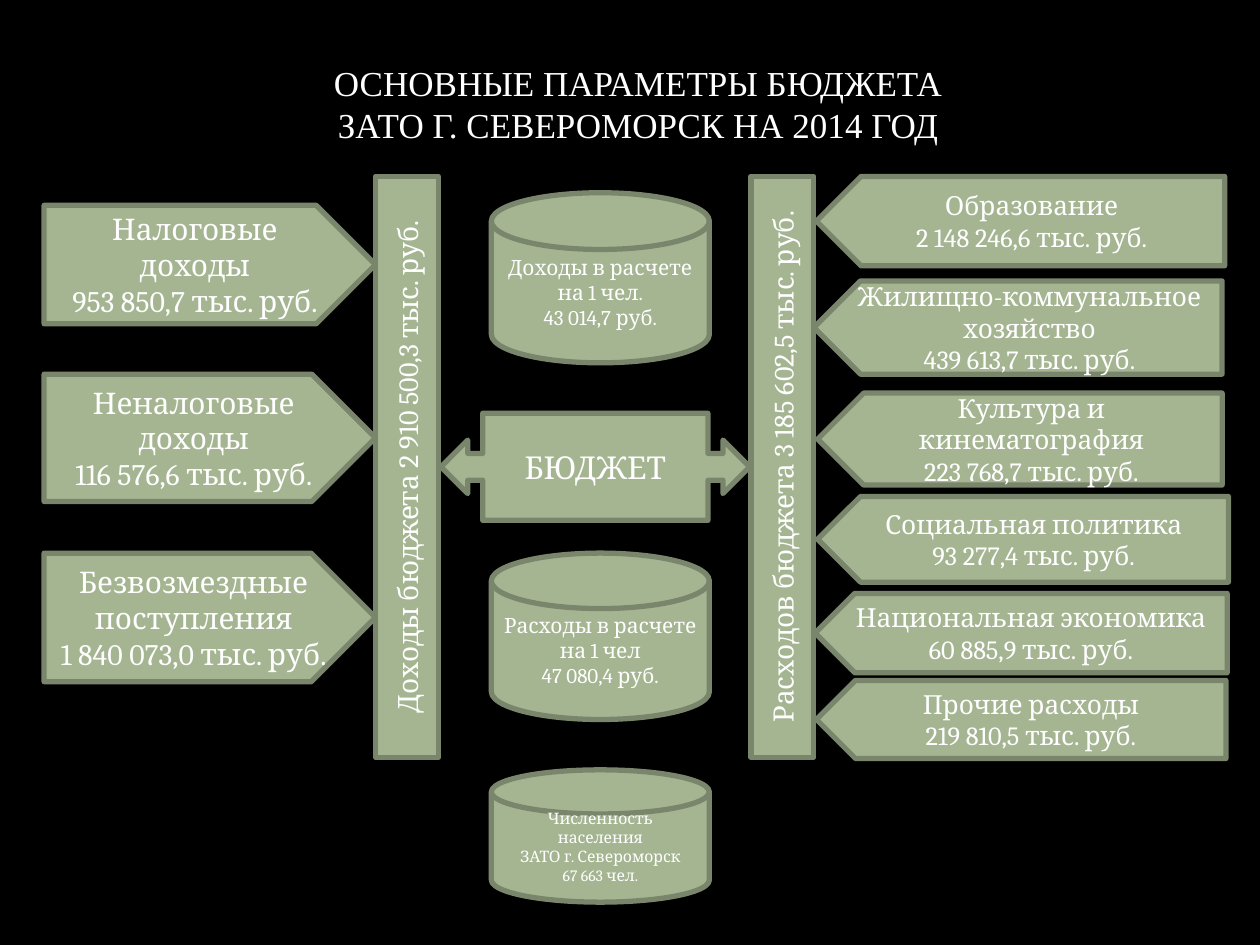
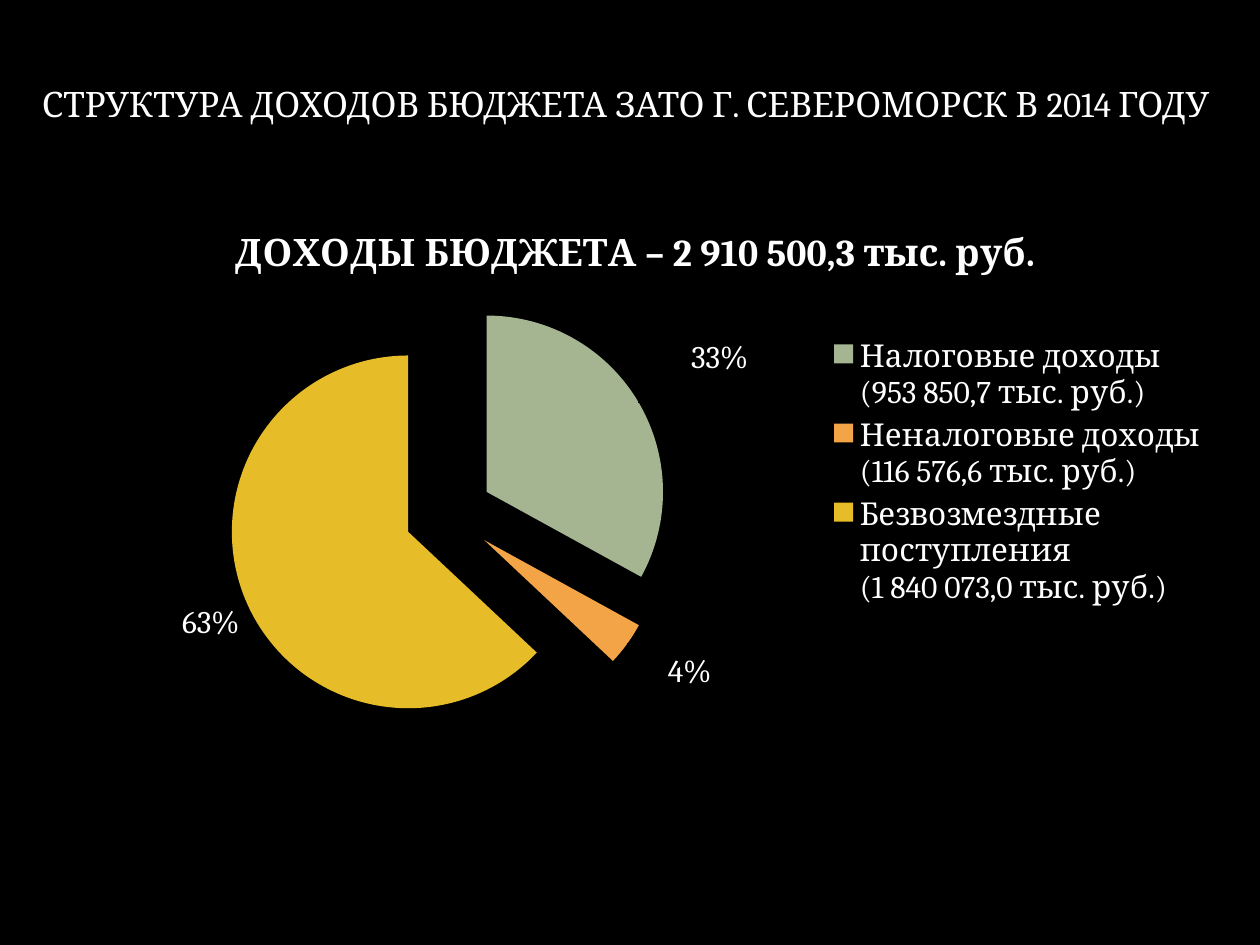
from dataclasses import dataclass

from lxml import etree
from pptx import Presentation
from pptx.chart.data import CategoryChartData
from pptx.dml.color import RGBColor
from pptx.enum.chart import XL_CHART_TYPE, XL_LEGEND_POSITION
from pptx.enum.shapes import MSO_SHAPE
from pptx.enum.text import MSO_ANCHOR, PP_ALIGN
from pptx.oxml.ns import qn
from pptx.util import Inches, Pt

PENTAGON = MSO_SHAPE.PENTAGON
CYLINDER = MSO_SHAPE.FLOWCHART_MAGNETIC_DISK
BAR = MSO_SHAPE.RECTANGLE
CALLOUT = MSO_SHAPE.LEFT_RIGHT_ARROW_CALLOUT
PIE = XL_CHART_TYPE.PIE
LEGEND_RIGHT = XL_LEGEND_POSITION.RIGHT
MIDDLE = MSO_ANCHOR.MIDDLE
CENTER = PP_ALIGN.CENTER

BLACK, WHITE = "000000", "FFFFFF"
GREEN, ORANGE, YELLOW = "A5B592", "F3A447", "E7BC29"
OUTLINE = "7A866C"
SERIF, TITLE_SERIF = "Cambria", "Times New Roman"
TITLE_ONLY = 5


@dataclass
class Block:
    """A filled diagram block with its text and box in inches."""
    kind: int
    text: str
    left: float
    top: float
    width: float
    height: float
    size: float
    flipped: bool = False
    vertical: bool = False
    adjustments: tuple = ()


@dataclass
class Slice:
    """A pie slice with its colour and label offset."""
    name: str
    percent: int
    color: str
    label_offset: tuple


def income(text: str, top: float, height: float) -> Block:
    """Describe an income arrow that points right."""
    return Block(PENTAGON, text, 0.35, top, 2.63, height, 17)


def expense(text: str, left: float, top: float, width: float, height: float) -> Block:
    """Describe an expense arrow that points left."""
    return Block(PENTAGON, text, left, top, width, height, 15, flipped=True)


def cylinder(text: str, top: float, height: float, size: float) -> Block:
    """Describe a cylinder in the middle column."""
    return Block(CYLINDER, text, 3.9, top, 1.73, height, size)


def total_bar(text: str, left: float) -> Block:
    """Describe a tall bar with a budget total."""
    return Block(BAR, text, left, 1.4, 0.5, 4.61, 16, vertical=True)


BLOCKS = [
    income("Налоговые доходы\n953 850,7 тыс. руб.", 1.63, 0.94),
    income("Неналоговые доходы\n116 576,6 тыс. руб.", 2.97, 1.01),
    income("Безвозмездные поступления\n1 840 073,0 тыс. руб.", 4.39, 1.02),
    cylinder("Доходы в расчете\nна 1 чел.\n43 014,7 руб.", 1.53, 1.35, 12),
    cylinder("Расходы в расчете на 1 чел\n47 080,4 руб.", 4.39, 1.32, 12),
    cylinder("Численность населения\nЗАТО г. Североморск\n67 663 чел.", 6.11, 1.05, 9),
    total_bar("Доходы бюджета 2 910 500,3 тыс. руб.", 2.98),
    total_bar("Расходов бюджета 3 185 602,5 тыс. руб.", 5.96),
    expense("Образование\n2 148 246,6 тыс. руб.", 6.48, 1.4, 3.24, 0.71),
    expense("Жилищно-коммунальное хозяйство\n439 613,7 тыс. руб.", 6.46, 2.23, 3.24, 0.74),
    expense("Культура и кинематография\n223 768,7 тыс. руб.", 6.49, 3.12, 3.21, 0.73),
    expense("Социальная политика\n93 277,4 тыс. руб.", 6.49, 3.94, 3.26, 0.68),
    expense("Национальная экономика\n60 885,9 тыс. руб.", 6.47, 4.71, 3.27, 0.63),
    expense("Прочие расходы\n219 810,5 тыс. руб.", 6.48, 5.4, 3.25, 0.62),
    Block(CALLOUT, "БЮДЖЕТ", 3.5, 3.28, 2.45, 0.85, 18, adjustments=(0.25, 0.25, 0.25, 0.73)),
]

SLICES = [
    Slice("Налоговые доходы\n(953 850,7 тыс. руб.)", 33, GREEN, (0.04, -0.04)),
    Slice("Неналоговые доходы\n(116 576,6 тыс. руб.)", 4, ORANGE, (0.03, 0.01)),
    Slice("Безвозмездные\nпоступления\n(1 840 073,0 тыс. руб.)", 63, YELLOW, (0, 0)),
]


def rgb(color: str) -> RGBColor:
    """Turn a hex string into a colour."""
    return RGBColor.from_string(color)


def set_font(font, size: float, name: str = SERIF, bold: bool = False) -> None:
    """Apply the shared white font style."""
    values = {"size": Pt(size), "name": name, "bold": bold}
    for attribute, value in values.items():
        setattr(font, attribute, value)
    font.color.rgb = rgb(WHITE)


def write_text(shape, text: str, size: float, name: str = SERIF) -> None:
    """Write centred paragraphs into a shape."""
    frame = shape.text_frame
    frame.text = text
    frame.word_wrap = True
    frame.vertical_anchor = MIDDLE
    for paragraph in frame.paragraphs:
        paragraph.alignment = CENTER
        for run in paragraph.runs:
            set_font(run.font, size, name)


def add_titled_slide(presentation, text: str, box: tuple, font_name: str):
    """Add a slide and place its title."""
    slide = presentation.slides.add_slide(presentation.slide_layouts[TITLE_ONLY])
    title = slide.shapes.title
    for attribute, value in zip(("left", "top", "width", "height"), box):
        setattr(title, attribute, Inches(value))
    write_text(title, text, 20, font_name)
    return slide


def add_block(slide, block: Block) -> None:
    """Draw one diagram block."""
    box = map(Inches, (block.left, block.top, block.width, block.height))
    shape = slide.shapes.add_shape(block.kind, *box)
    shape.shadow.inherit = False
    shape.fill.solid()
    shape.fill.fore_color.rgb = rgb(GREEN)
    shape.line.color.rgb = rgb(OUTLINE)
    shape.line.width = Pt(3)
    for index, value in enumerate(block.adjustments):
        shape.adjustments[index] = value
    write_text(shape, block.text, block.size)
    if block.flipped:
        shape._element.spPr.find(qn("a:xfrm")).set("flipH", "1")
    if block.vertical:
        shape._element.txBody.find(qn("a:bodyPr")).set("vert", "vert270")


def set_layout(element, position: int, edge: bool = True, **fractions: float) -> None:
    """Place a chart part by fractions of the chart area."""
    for old_layout in element.findall(qn("c:layout")):
        element.remove(old_layout)
    layout = etree.Element(qn("c:layout"))
    manual = etree.SubElement(layout, qn("c:manualLayout"))
    values = {"xMode": "edge", "yMode": "edge"} if edge else {}
    for tag, value in {**values, **fractions}.items():
        etree.SubElement(manual, qn(f"c:{tag}")).set("val", str(value))
    element.insert(position, layout)


def format_slice(series, index: int, pie_slice: Slice) -> None:
    """Colour one slice and show its percentage."""
    point = series.points[index]
    point.format.fill.solid()
    point.format.fill.fore_color.rgb = rgb(pie_slice.color)
    point.format.line.fill.background()
    set_font(point.data_label.font, 18)
    label = point.data_label._get_or_add_dLbl()
    for tag, value in {"c:showVal": "0", "c:showPercent": "1"}.items():
        label.find(qn(tag)).set("val", value)
    offset_x, offset_y = pie_slice.label_offset
    set_layout(label, 1, edge=False, x=offset_x, y=offset_y)


def add_income_chart(slide) -> None:
    """Draw the exploded pie of budget income."""
    data = CategoryChartData()
    data.categories = [pie_slice.name for pie_slice in SLICES]
    data.add_series("Доходы бюджета", [pie_slice.percent for pie_slice in SLICES])
    box = map(Inches, (0.43, 1.53, 9.21, 4.44))
    chart = slide.shapes.add_chart(PIE, *box, data).chart
    set_font(chart.font, 18)

    area = etree.Element(qn("c:spPr"))
    etree.SubElement(area, qn("a:noFill"))
    etree.SubElement(etree.SubElement(area, qn("a:ln")), qn("a:noFill"))
    chart._chartSpace.find(qn("c:chart")).addnext(area)

    chart.has_title = True
    title_frame = chart.chart_title.text_frame
    title_frame.text = "ДОХОДЫ БЮДЖЕТА – 2 910 500,3 тыс. руб."
    set_font(title_frame.paragraphs[0].runs[0].font, 21.6, bold=True)
    chart.has_legend = True
    chart.legend.position = LEGEND_RIGHT
    chart.legend.include_in_layout = False
    set_font(chart.legend.font, 18)

    plot = chart.plots[0]
    plot.vary_by_categories = True
    series = plot.series[0]
    explosion = etree.Element(qn("c:explosion"))
    explosion.set("val", "25")
    series._element.find(qn("c:tx")).addnext(explosion)
    for index, pie_slice in enumerate(SLICES):
        format_slice(series, index, pie_slice)

    set_layout(chart.chart_title._element, 1, x=0.15, y=0.05)
    set_layout(chart.legend._element, 1, x=0.66, y=0.25, w=0.34, h=0.5)
    plot_area = chart._chartSpace.chart.plotArea
    set_layout(plot_area, 0, x=0.15, y=0.18, w=0.38, h=0.79)


def main() -> None:
    """Build and save the budget slides."""
    presentation = Presentation()
    presentation.slide_width = Inches(10)
    presentation.slide_height = Inches(7.5)
    background = presentation.slide_master.background.fill
    background.solid()
    background.fore_color.rgb = rgb(BLACK)

    parameters = add_titled_slide(
        presentation, "ОСНОВНЫЕ ПАРАМЕТРЫ БЮДЖЕТА\nЗАТО Г. СЕВЕРОМОРСК НА 2014 ГОД",
        (0.38, 0.44, 9.37, 0.77), TITLE_SERIF)
    for block in BLOCKS:
        add_block(parameters, block)

    structure = add_titled_slide(
        presentation, "СТРУКТУРА ДОХОДОВ БЮДЖЕТА ЗАТО Г. СЕВЕРОМОРСК В 2014 ГОДУ",
        (0.2, 0.6, 9.53, 0.44), SERIF)
    add_income_chart(structure)
    presentation.save("out.pptx")


if __name__ == "__main__":
    main()
